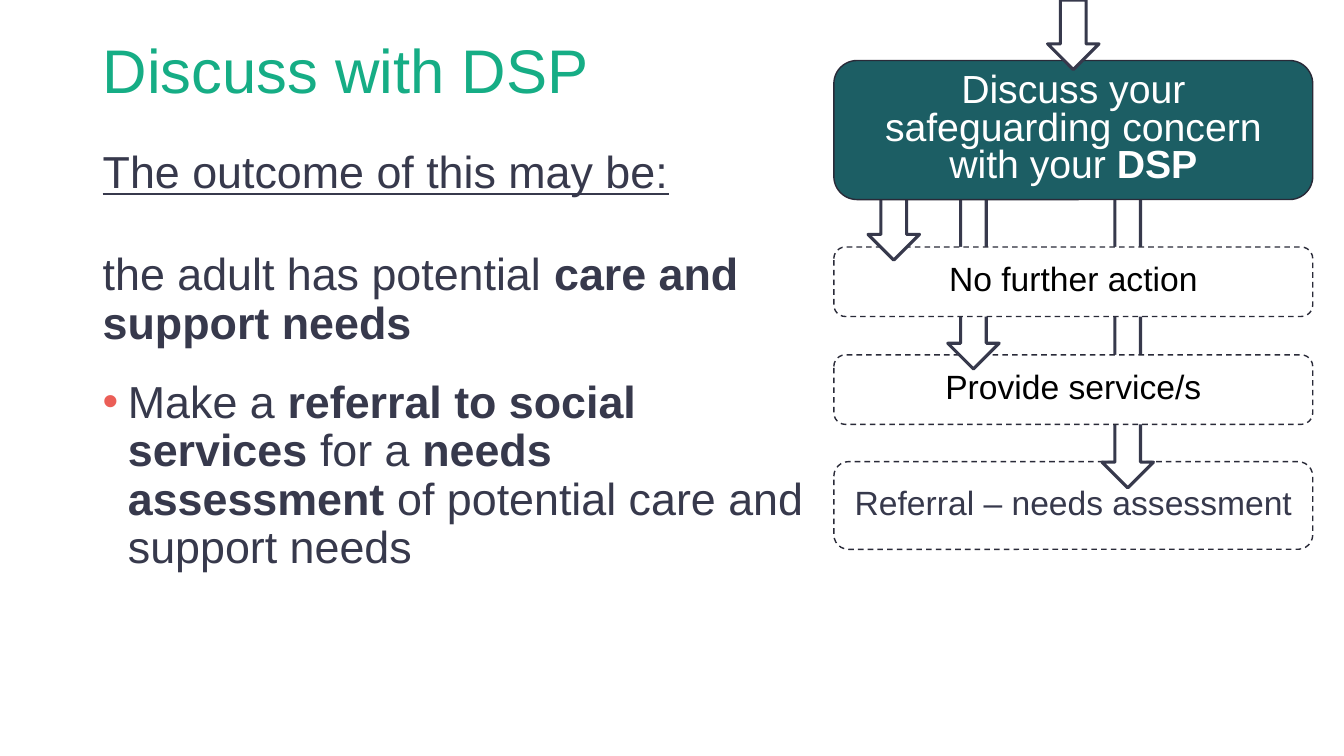
from dataclasses import dataclass

from lxml import etree
from pptx import Presentation
from pptx.dml.color import RGBColor
from pptx.enum import dml, shapes, text
from pptx.oxml import ns
from pptx.util import Inches, Pt


@dataclass(frozen=True)
class Theme:
    font: str = "Arial"
    green: str = "16AD85"
    ink: str = "37394C"
    outline: str = "292A38"
    teal: str = "1C5E64"
    coral: str = "EB5E57"
    white: str = "FFFFFF"
    black: str = "000000"
    title: int = 44
    body: int = 32
    header: int = 28
    step: int = 24


THEME = Theme()


def rgb(value):
    return RGBColor.from_string(value)


def add_bullet(p, color, indent=0.25):
    pPr = p._p.get_or_add_pPr()
    pPr.set("marL", str(Inches(indent)))
    pPr.set("indent", str(-Inches(indent)))
    clr = etree.SubElement(pPr, ns.qn("a:buClr"))
    etree.SubElement(clr, ns.qn("a:srgbClr")).set("val", color)
    etree.SubElement(pPr, ns.qn("a:buFont")).set("typeface", THEME.font)
    etree.SubElement(pPr, ns.qn("a:buChar")).set("char", "•")


def write(p, content, size, color, spacing=0.9, before=0, after=0,
          align=text.PP_ALIGN.LEFT, underline=False, bullet=None):
    """Fill a paragraph; stretches between ** marks are bold."""
    p.alignment, p.line_spacing = align, spacing
    p.space_before, p.space_after = Pt(before), Pt(after)
    if bullet:
        add_bullet(p, bullet)
    for i, part in enumerate(content.split("**")):
        if part:
            r = p.add_run()
            r.text = part
            f = r.font
            f.name, f.size, f.bold, f.underline = THEME.font, Pt(size), i % 2 == 1, underline
            f.color.rgb = rgb(color)


def add_text_box(s, box, anchor=text.MSO_ANCHOR.TOP):
    tf = s.shapes.add_textbox(*map(Inches, box)).text_frame
    tf.word_wrap, tf.vertical_anchor = True, anchor
    return tf


def add_box(parent, kind, box, fill, line, width, dashed=False):
    sp = parent.shapes.add_shape(kind, *map(Inches, box))
    sp.shadow.inherit = False
    sp.fill.solid()
    sp.fill.fore_color.rgb = rgb(fill)
    sp.line.color.rgb, sp.line.width = rgb(line), Pt(width)
    if dashed:
        sp.line.dash_style = dml.MSO_LINE.DASH
    return sp


def add_message(s, box):
    """Title, lead-in and outcome text down the left side."""
    x, y, w, h = box
    tf = add_text_box(s, (x, y, w, 0.65), text.MSO_ANCHOR.MIDDLE)
    write(tf.paragraphs[0], "Discuss with DSP", THEME.title, THEME.green)

    tf = add_text_box(s, (x, y + 1.04, w, 0.56))
    write(tf.paragraphs[0], "The outcome of this may be:", THEME.body, THEME.ink,
          after=12, underline=True)

    tf = add_text_box(s, (x, y + 2.05, w, h - 2.05))
    write(tf.paragraphs[0], "the adult has potential** care and support needs**",
          THEME.body, THEME.ink, after=12)
    write(tf.add_paragraph(),
          "Make a **referral to social services **for a **needs assessment** "
          "of potential care and support needs",
          THEME.body, THEME.ink, before=10, after=12, bullet=THEME.coral)


def add_stage(s, box, label, size, color, arrow, header=False):
    """One flow box with its incoming arrow; arrow is (left, top)."""
    group = s.shapes.add_group_shape()
    sp = add_box(group, shapes.MSO_SHAPE.ROUNDED_RECTANGLE, box,
                 THEME.teal if header else THEME.white, THEME.outline, 1, not header)
    tf = sp.text_frame
    tf.word_wrap, tf.vertical_anchor = True, text.MSO_ANCHOR.MIDDLE
    write(tf.paragraphs[0], label, size, color, spacing=0.8, align=text.PP_ALIGN.CENTER)
    left, top, tip = arrow
    add_box(group, shapes.MSO_SHAPE.DOWN_ARROW, (left, top, 0.51, tip - top),
            THEME.white, THEME.ink, 2.25)


def add_flow(s, box):
    """Stages from last to first, so each box covers the arrows behind it."""
    x, y, w, _ = box
    # label, top, height, text colour, arrow (left, top, tip)
    outcomes = [
        ("Referral – needs assessment", 4.58, 0.87, THEME.ink, (2.66, 1.53, 4.84)),
        ("Provide service/s", 3.52, 0.69, THEME.black, (1.13, 1.84, 3.66)),
        ("No further action", 2.45, 0.69, THEME.black, (0.34, 1.89, 2.58)),
    ]
    for label, top, height, color, (left, start, tip) in outcomes:
        add_stage(s, (x, y + top, w, height), label, THEME.step, color,
                  (x + left, y + start, y + tip))
    add_stage(s, (x, y + 0.6, w, 1.38),
              "Discuss your safeguarding concern with your **DSP**",
              THEME.header, THEME.white, (x + 2.12, y, y + 0.69), header=True)


def main():
    prs = Presentation()
    prs.slide_width, prs.slide_height = Inches(13.33), Inches(7.5)
    s = prs.slides.add_slide(prs.slide_layouts[6])
    add_message(s, (0.92, 0.4, 7.32, 6.2))
    add_flow(s, (8.27, 0, 4.75, 5.45))
    prs.save("out.pptx")


if __name__ == "__main__":
    main()
